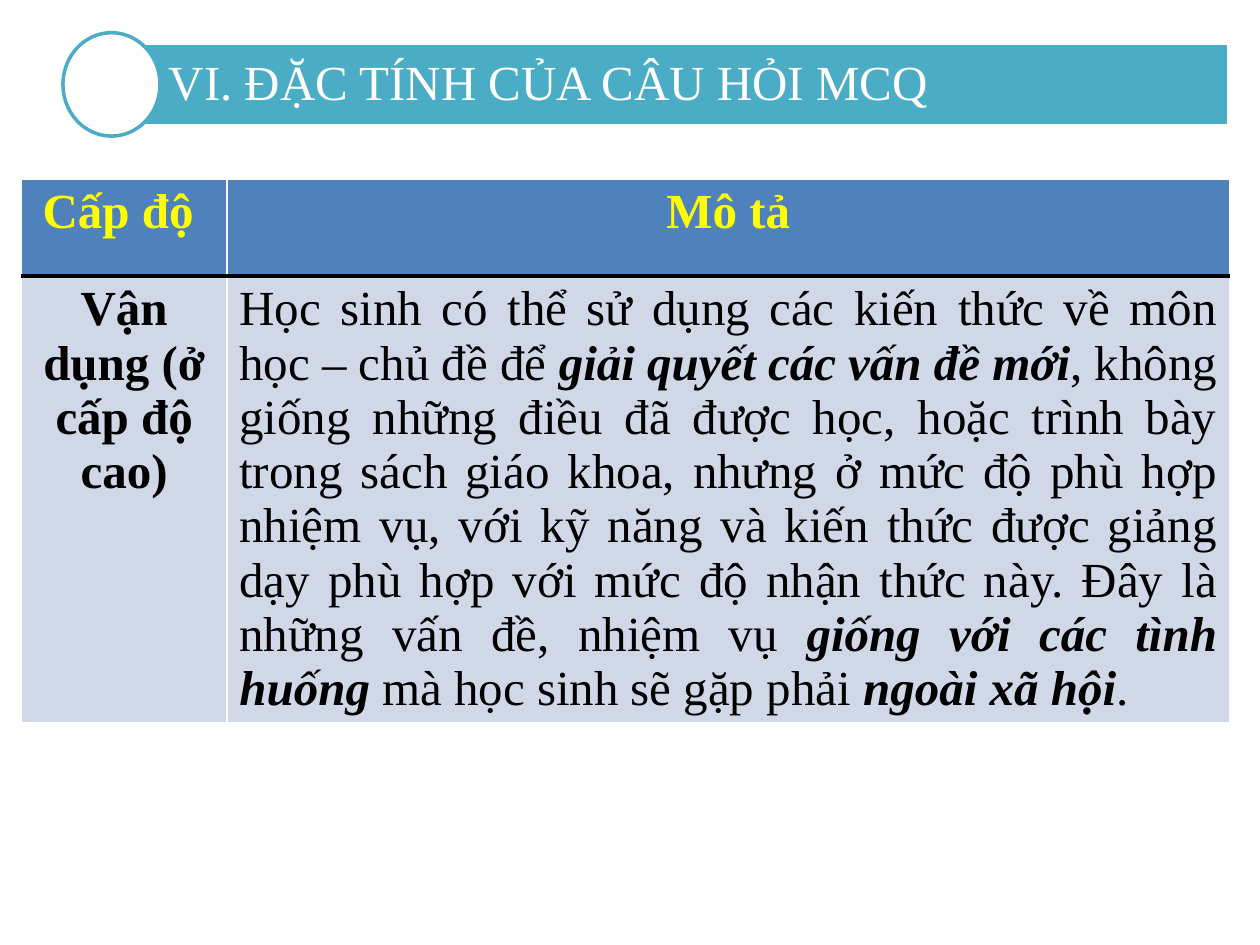
from lxml.etree import SubElement
from pptx import Presentation
from pptx.dml.color import RGBColor
from pptx.enum.shapes import MSO_SHAPE
from pptx.enum.text import MSO_ANCHOR, PP_ALIGN
from pptx.oxml.ns import qn
from pptx.util import Inches, Pt

WHITE = RGBColor(0xFF, 0xFF, 0xFF)
BLACK = RGBColor(0, 0, 0)
YELLOW = RGBColor(0xFF, 0xFF, 0)
TEAL = RGBColor(0x4B, 0xAC, 0xC6)
BLUE = RGBColor(0x4F, 0x81, 0xBD)
PALE = RGBColor(0xD0, 0xD8, 0xE8)

TITLE = "VI. ĐẶC TÍNH CỦA CÂU HỎI MCQ"
HEADS = ["Cấp độ ", "Mô tả"]
LEVEL = "Vận dụng (ở cấp độ cao)"
# Each part of the description: text, emphasised or not
DETAIL = [
    ("Học sinh có thể sử dụng các kiến thức về môn học – chủ đề để ", False),
    ("giải quyết các vấn đề mới", True),
    (", không giống những điều đã được học, hoặc trình bày trong sách giáo "
     "khoa, nhưng ở mức độ phù hợp nhiệm vụ, với kỹ năng và kiến thức được "
     "giảng dạy phù hợp với mức độ nhận thức này. Đây là những vấn đề, "
     "nhiệm vụ ", False),
    ("giống với các tình huống ", True),
    ("mà học sinh sẽ gặp phải ", False),
    ("ngoài xã hội", True),
    (".", False),
]


def add_run(para, text, color, bold=False, italic=False):
    run = para.add_run()
    run.text = text
    font = run.font
    font.name = "Times New Roman"
    font.size = Pt(28)
    font.bold = bold
    font.italic = italic
    font.color.rgb = color


def add_block(slide, kind, box, fill, line):
    shape = slide.shapes.add_shape(kind, *map(Inches, box))
    shape.shadow.inherit = False
    shape.fill.solid()
    shape.fill.fore_color.rgb = fill
    shape.line.color.rgb = line
    shape.line.width = Pt(2)
    return shape


def add_banner(slide, left, top, width, height):
    """Title bar with a circle over its left end."""
    bar = add_block(slide, MSO_SHAPE.RECTANGLE,
                    (left + 0.38, top + 0.08, width - 0.38, height - 0.16),
                    TEAL, WHITE)
    frame = bar.text_frame
    frame.word_wrap = True
    frame.vertical_anchor = MSO_ANCHOR.MIDDLE
    frame.margin_left = Inches(0.46)
    frame.margin_top = frame.margin_right = frame.margin_bottom = Inches(0.06)
    para = frame.paragraphs[0]
    para.alignment = PP_ALIGN.LEFT
    para.line_spacing = 0.9
    add_run(para, TITLE, WHITE)
    add_block(slide, MSO_SHAPE.OVAL, (left, top, 0.77, height), WHITE, TEAL)


def style_cell(cell, fill, **rules):
    """Fill the cell and rule its edges: white 1 pt unless black is asked for."""
    props = cell._tc.get_or_add_tcPr()
    for edge in "LRTB":
        color, width = rules.get(edge, (WHITE, 1))
        line = SubElement(props, qn(f"a:ln{edge}"), w=str(Pt(width)))
        solid = SubElement(line, qn("a:solidFill"))
        SubElement(solid, qn("a:srgbClr"), val=str(color))
    cell.fill.solid()
    cell.fill.fore_color.rgb = fill


def add_levels(slide, left, top, width, height):
    """Table of the level and its description."""
    table = slide.shapes.add_table(
        2, 2, *map(Inches, (left, top, width, height))).table
    first, head = 1.63, 0.77
    table.columns[0].width = Inches(first)
    table.columns[1].width = Inches(width - first)
    table.rows[0].height = Inches(head)
    table.rows[1].height = Inches(height - head)

    thick = (BLACK, 2.25)
    for col, text in enumerate(HEADS):
        cell = table.cell(0, col)
        style_cell(cell, BLUE, B=thick)
        style_cell(table.cell(1, col), PALE, T=thick)
        para = cell.text_frame.paragraphs[0]
        para.alignment = PP_ALIGN.CENTER
        add_run(para, text, YELLOW, bold=True)

    para = table.cell(1, 0).text_frame.paragraphs[0]
    para.alignment = PP_ALIGN.CENTER
    add_run(para, LEVEL, BLACK, bold=True)
    para = table.cell(1, 1).text_frame.paragraphs[0]
    para.alignment = PP_ALIGN.JUSTIFY
    for text, strong in DETAIL:
        add_run(para, text, BLACK, strong, strong)


def main():
    deck = Presentation()
    deck.slide_width = Inches(10)
    deck.slide_height = Inches(7.5)
    slide = deck.slides.add_slide(deck.slide_layouts[6])
    add_levels(slide, 0.17, 1.42, 9.59, 3.88)
    add_banner(slide, 0.5, 0.26, 9.25, 0.82)
    deck.save("out.pptx")


if __name__ == "__main__":
    main()
